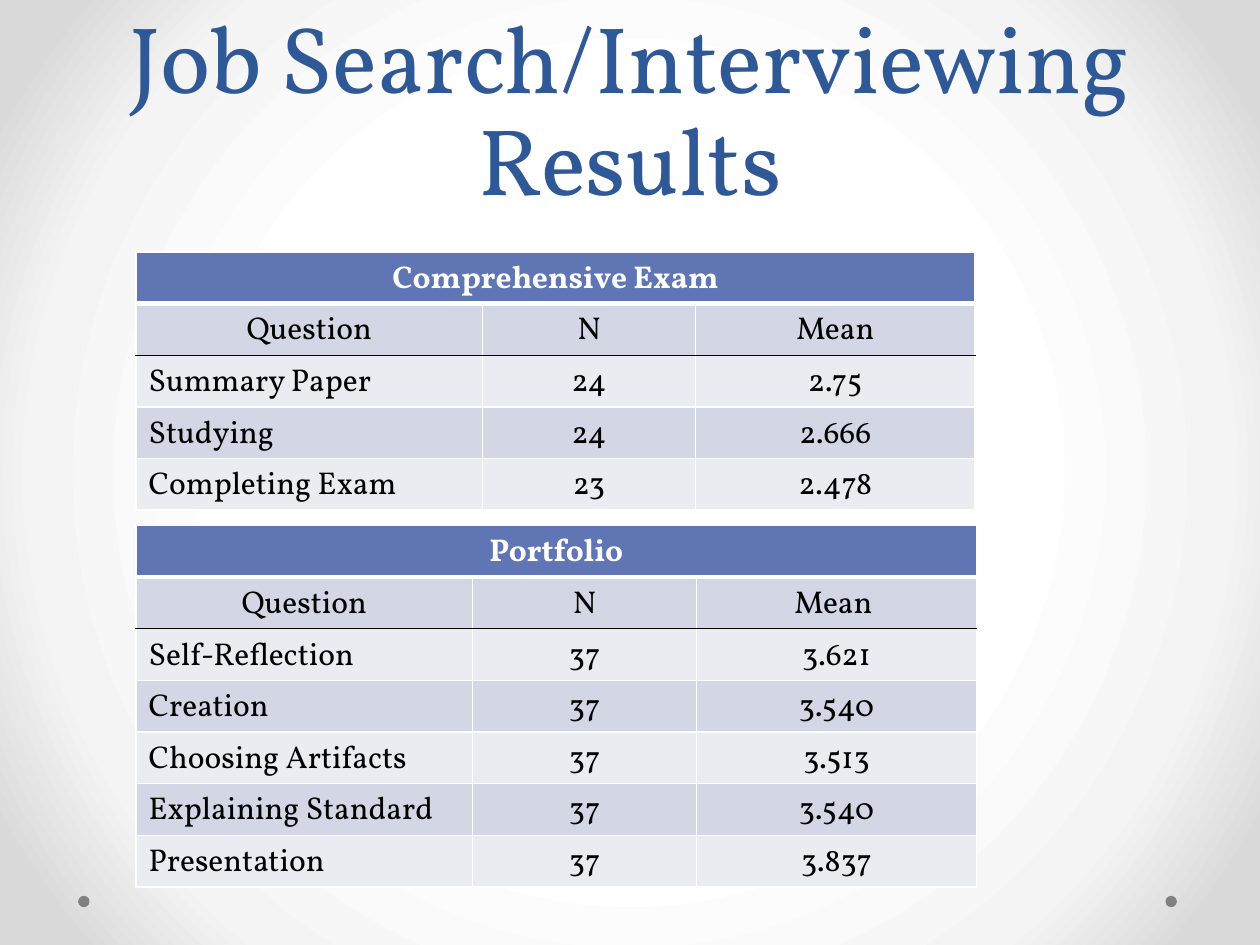
from lxml.etree import SubElement
from pptx import Presentation
from pptx.dml.color import RGBColor
from pptx.enum.shapes import MSO_SHAPE
from pptx.enum.text import MSO_ANCHOR, PP_ALIGN
from pptx.oxml import parse_xml
from pptx.oxml.ns import nsdecls, qn
from pptx.util import Inches, Pt

COLORS = {
    "title": "2F5897",
    "header": "6076B4",
    "band": "D2D6E5",
    "light": "EAECF2",
    "white": "FFFFFF",
    "black": "000000",
    "dot": "808080",
}
BACKGROUND_STOPS = [(50, "FFFFFF"), (76, "F4F4F4"), (92, "DADADA")]
ROW_HEIGHT = 0.41

EXAM_ROWS = [
    ("Question", "N", "Mean"),
    ("Summary Paper", "24", "2.75"),
    ("Studying", "24", "2.666"),
    ("Completing Exam", "23", "2.478"),
]
PORTFOLIO_ROWS = [
    ("Question", "N", "Mean "),
    ("Self-Reflection", "37", "3.621"),
    ("Creation", "37", "3.540"),
    ("Choosing Artifacts", "37", "3.513"),
    ("Explaining Standard", "37", "3.540"),
    ("Presentation", "37", "3.837"),
]


class ResultsPage:
    """Holds the text style and the slide being filled."""

    font_name = "Vollkorn"

    def __init__(self, page):
        self.page = page

    def background(self, stops):
        """Radial gradient from the centre; stops are (percent, hex) pairs."""
        self.page.background.fill.gradient()
        gradient = self.page.element.find(".//" + qn("a:gradFill"))
        marks = "".join(
            f'<a:gs pos="{percent * 1000}"><a:srgbClr val="{color}"/></a:gs>'
            for percent, color in stops
        )
        gradient.getparent().replace(gradient, parse_xml(
            f'<a:gradFill {nsdecls("a")} rotWithShape="1"><a:gsLst>{marks}</a:gsLst>'
            '<a:path path="circle">'
            '<a:fillToRect l="50000" t="50000" r="50000" b="50000"/>'
            "</a:path></a:gradFill>"
        ))

    def text(self, frame, words, size, color, bold=False, align=PP_ALIGN.CENTER):
        paragraph = frame.paragraphs[0]
        paragraph.text = words
        paragraph.alignment = align
        style = {"name": self.font_name, "size": Pt(size), "bold": bold}
        for span in paragraph.runs:
            for key, value in style.items():
                setattr(span.font, key, value)
            span.font.color.rgb = RGBColor.from_string(COLORS[color])
        return paragraph

    def title(self, words, left, top, width, height):
        box = self.page.shapes.add_textbox(
            Inches(left), Inches(top), Inches(width), Inches(height))
        frame = box.text_frame
        frame.word_wrap = True
        frame.vertical_anchor = MSO_ANCHOR.BOTTOM
        self.text(frame, words, 54, "title").line_spacing = Pt(58)

    def dot(self, left, top, size=0.09):
        shape = self.page.shapes.add_shape(
            MSO_SHAPE.OVAL, Inches(left), Inches(top), Inches(size), Inches(size))
        shape.shadow.inherit = False
        shape.fill.solid()
        shape.fill.fore_color.rgb = RGBColor.from_string(COLORS["dot"])
        shape.line.fill.background()

    def cell_borders(self, cell, top, bottom):
        """Draw white sides, and top and bottom as (color, points)."""
        properties = cell._tc.get_or_add_tcPr()
        sides = {"L": ("white", 1), "R": ("white", 1), "T": top, "B": bottom}
        for side, (color, points) in sides.items():
            line = SubElement(properties, qn(f"a:ln{side}"), w=str(Pt(points)))
            fill = SubElement(line, qn("a:solidFill"))
            SubElement(fill, qn("a:srgbClr"), val=COLORS[color])

    def table(self, heading, rows, left, top, widths):
        """A heading across all columns, then a label row and banded data rows."""
        content = [(heading, "", "")] + rows
        table = self.page.shapes.add_table(
            len(content), len(widths), Inches(left), Inches(top),
            Inches(sum(widths)), Inches(ROW_HEIGHT * len(content))).table
        table.horz_banding = False
        table.first_row = False
        for column, width in zip(table.columns, widths):
            column.width = Inches(width)
        rules = [("white", 1), ("white", 3), ("black", 1)]
        rules += [("white", 1)] * (len(content) - 2)
        for i, values in enumerate(content):
            table.rows[i].height = Inches(ROW_HEIGHT)
            fill = "header" if i == 0 else "band" if i % 2 else "light"
            for j, value in enumerate(values):
                cell = table.cell(i, j)
                self.cell_borders(cell, rules[i], rules[i + 1])
                cell.fill.solid()
                cell.fill.fore_color.rgb = RGBColor.from_string(COLORS[fill])
                align = PP_ALIGN.LEFT if i > 1 and j == 0 else PP_ALIGN.CENTER
                color = "black" if i else "white"
                self.text(cell.text_frame, value, 18, color, i == 0, align)
        table.cell(0, 0).merge(table.cell(0, len(widths) - 1))


def main():
    deck = Presentation()
    deck.slide_width, deck.slide_height = Inches(10), Inches(7.5)
    results = ResultsPage(deck.slides.add_slide(deck.slide_layouts[6]))
    results.background(BACKGROUND_STOPS)
    for left in (9.25, 0.62):
        results.dot(left, 7.11)
    results.title("Job Search/Interviewing\nResults", 0.5, 0, 9, 1.75)
    results.table("Comprehensive Exam", EXAM_ROWS, 1.08, 2, (2.75, 1.69, 2.22))
    results.table("Portfolio", PORTFOLIO_ROWS, 1.08, 4.17, (2.67, 1.78, 2.22))
    deck.save("out.pptx")


if __name__ == "__main__":
    main()
